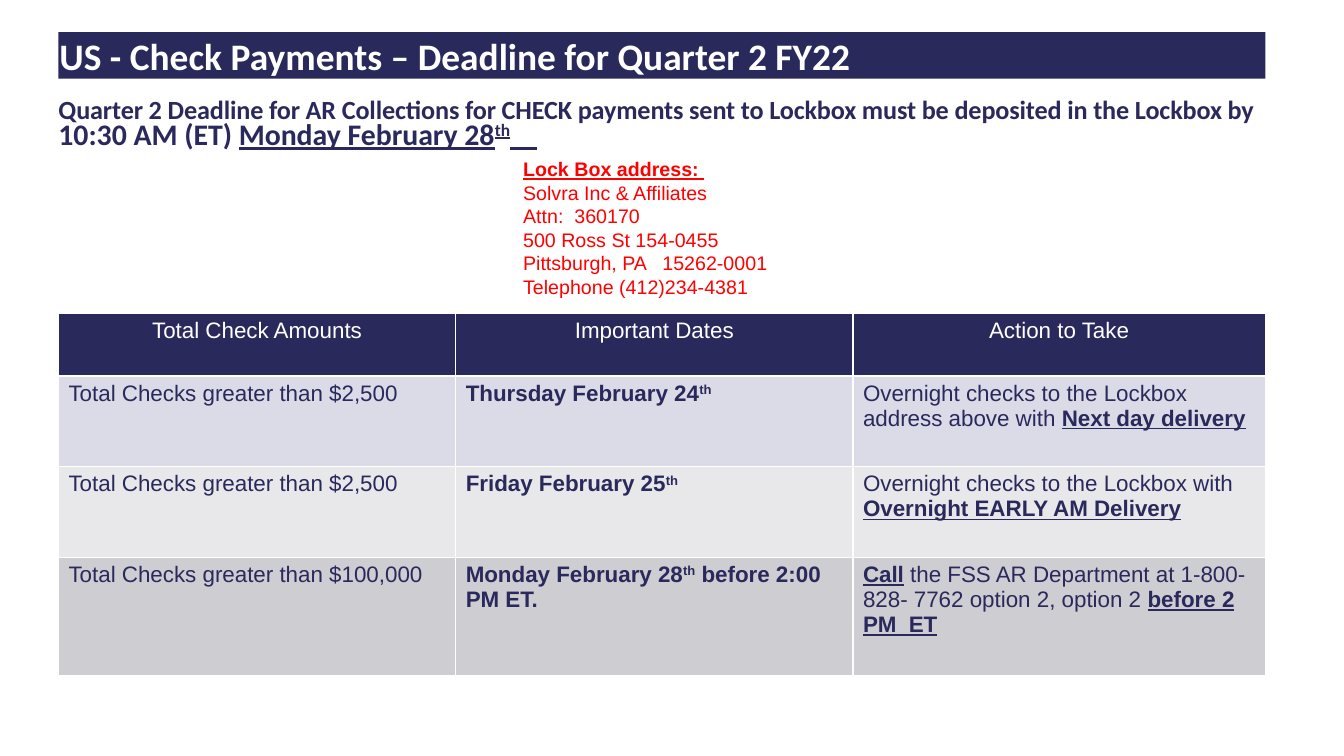
"""Build the slide on check payment deadlines for Quarter 2 FY22."""
from lxml import etree
from pptx import Presentation, util as u
from pptx.dml.color import RGBColor
from pptx.enum import shapes, text
from pptx.oxml.ns import qn

NAVY, WHITE, RED = "2A295C", "FFFFFF", "FF0000"


def color(value):
    return RGBColor.from_string(value)


def write(paragraph, runs, name, size, value):
    """Fill a paragraph with (text, style) runs: b bold, u underline, ^ superscript."""
    paragraph.font.name = name
    paragraph.font.size = u.Pt(size)
    paragraph.font.color.rgb = color(value)
    for words, style in runs:
        run = paragraph.add_run()
        run.text = words
        run.font.bold = "b" in style
        run.font.underline = "u" in style
        if "^" in style:
            run.font._element.set("baseline", "30000")


presentation = Presentation()
presentation.slide_width = u.Inches(13.33)
presentation.slide_height = u.Inches(7.5)
slide = presentation.slides.add_slide(presentation.slide_layouts[6])

title = [("US - Check Payments – Deadline for Quarter 2 FY22", "b")]
deadline = [
    ("Quarter 2 Deadline for AR Collections for CHECK payments sent to Lockbox "
     "must be deposited in the Lockbox by ", "b"),
    ("10:30 AM (ET) ", "b"), ("Monday February 28", "bu"), ("th", "bu^"), ("    ", "bu"),
]
banners = [
    (0.32, 0.46, NAVY, title, 26.7, WHITE, 0.01),
    (0.96, 0.56, WHITE, deadline, 18.7, NAVY, 0),
]
for top, height, fill, runs, size, font_color, margin in banners:
    shape = slide.shapes.add_shape(shapes.MSO_SHAPE.RECTANGLE, u.Inches(0.58), u.Inches(top),
                                   u.Inches(11.97), u.Inches(height))
    shape.shadow.inherit = False
    shape.fill.solid()
    shape.fill.fore_color.rgb = color(fill)
    shape.line.fill.background()
    frame = shape.text_frame
    frame.word_wrap = True
    frame.vertical_anchor = text.MSO_ANCHOR.TOP
    frame.margin_left = u.Inches(margin)
    frame.margin_right = frame.margin_bottom = 0
    frame.margin_top = u.Inches(0.01)
    paragraph = frame.paragraphs[0]
    paragraph.alignment = text.PP_ALIGN.LEFT
    paragraph.space_before = u.Pt(1)
    write(paragraph, runs, "Calibri", size, font_color)
    if runs is deadline:
        paragraph.line_spacing = u.Pt(19.1)
        paragraph.runs[0].font._element.set("spc", "-10")
        for run in paragraph.runs[1:]:
            run.font.size = u.Pt(21.3)

address = [
    ("Lock Box address: ", "bu"),
    ("Solvra Inc & Affiliates", ""),
    ("Attn:  360170", ""),
    ("500 Ross St 154-0455", ""),
    ("Pittsburgh, PA   15262-0001", ""),
    ("Telephone (412)234-4381", ""),
]
address_box = slide.shapes.add_textbox(u.Inches(5.09), u.Inches(1.51), u.Inches(2.73), u.Inches(1.51))
frame = address_box.text_frame
frame.word_wrap = True
for index, line in enumerate(address):
    paragraph = frame.add_paragraph() if index else frame.paragraphs[0]
    write(paragraph, [line], "Arial", 14, RED)

rows = [
    (0.62, NAVY, [[("Total Check Amounts", "")], [("Important Dates", "")], [("Action to Take", "")]]),
    (0.9, "DBDBE7", [
        [("Total Checks greater than $2,500", "")],
        [("Thursday February 24", "b"), ("th", "b^")],
        [("Overnight checks to the Lockbox address above with ", ""), ("Next day delivery", "bu")],
    ]),
    (0.9, "E8E8EA", [
        [("Total Checks greater than $2,500", "")],
        [("Friday February 25", "b"), ("th", "b^")],
        [("Overnight checks to the Lockbox with ", ""), ("Overnight EARLY AM Delivery", "bu")],
    ]),
    (1.17, "CDCDD2", [
        [("Total Checks greater than $100,000", "")],
        [("Monday February 28", "b"), ("th", "b^"), (" before 2:00 PM ET.", "b")],
        [("Call", "bu"), (" the FSS AR Department at 1-800-828- 7762 option 2, option 2 ", ""),
         ("before 2 PM  ET", "bu")],
    ]),
]
table = slide.shapes.add_table(len(rows), 3, u.Inches(0.58), u.Inches(3.11),
                               u.Inches(11.97), u.Inches(3.59)).table
for column, width in zip(table.columns, (3.94, 3.94, 4.09)):
    column.width = u.Inches(width)
for row_index, (height, fill, cells) in enumerate(rows):
    header = row_index == 0
    table.rows[row_index].height = u.Inches(height)
    for column_index, runs in enumerate(cells):
        cell = table.cell(row_index, column_index)
        paragraph = cell.text_frame.paragraphs[0]
        paragraph.alignment = text.PP_ALIGN.CENTER if header else text.PP_ALIGN.LEFT
        write(paragraph, runs, "Arial", 16, WHITE if header else NAVY)
        properties = cell._tc.get_or_add_tcPr()
        for side in ("lnL", "lnR", "lnT", "lnB"):
            border = etree.SubElement(properties, qn("a:" + side), w=str(u.Pt(1)))
            solid = etree.SubElement(border, qn("a:solidFill"))
            etree.SubElement(solid, qn("a:srgbClr"), val=WHITE)
        cell.fill.solid()
        cell.fill.fore_color.rgb = color(fill)

presentation.save("out.pptx")
